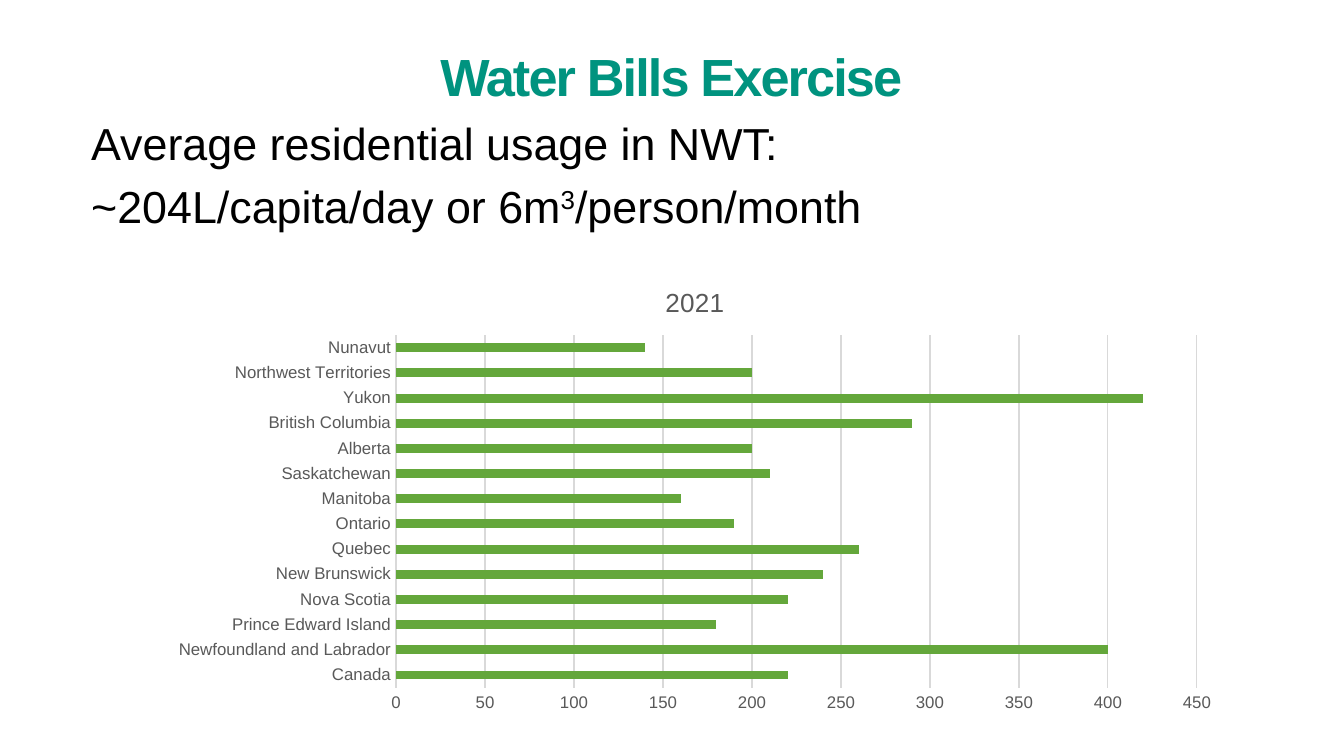
from typing import NamedTuple

from pptx import Presentation
from pptx.chart.data import CategoryChartData
from pptx.dml.color import RGBColor
from pptx.enum.chart import XL_CHART_TYPE, XL_TICK_MARK
from pptx.enum.text import MSO_ANCHOR, MSO_AUTO_SIZE, PP_ALIGN
from pptx.util import Inches, Pt

HUES = {"title": "00937F", "text": "000000", "label": "595959",
        "grid": "D9D9D9", "bar": "64A73B"}
FONT = "Arial"


class Usage(NamedTuple):
    place: str
    litres: int


USAGES = [
    Usage("Canada", 220),
    Usage("Newfoundland and Labrador", 400),
    Usage("Prince Edward Island", 180),
    Usage("Nova Scotia", 220),
    Usage("New Brunswick", 240),
    Usage("Quebec", 260),
    Usage("Ontario", 190),
    Usage("Manitoba", 160),
    Usage("Saskatchewan", 210),
    Usage("Alberta", 200),
    Usage("British Columbia", 290),
    Usage("Yukon", 420),
    Usage("Northwest Territories", 200),
    Usage("Nunavut", 140),
]


def style(font, size: float, hue: str, bold: bool = False) -> None:
    font.name, font.size, font.bold = FONT, Pt(size), bold
    font.color.rgb = RGBColor.from_string(HUES[hue])


def write(para, text: str, *, size: float, hue: str, bold: bool = False,
          track: float = 0, raised: int = 0) -> None:
    """Add a run; track is in points, raised in percent."""
    run = para.add_run()
    run.text = text
    style(run.font, size, hue, bold)
    props = run._r.get_or_add_rPr()
    if track:
        props.set("spc", str(int(track * 100)))
    if raised:
        props.set("baseline", str(raised * 1000))


def draw_title(slide) -> None:
    title = slide.shapes.title
    title.left, title.top = Inches(0.83), Inches(0.25)
    title.width, title.height = Inches(8.33), Inches(0.62)
    frame = title.text_frame
    frame.auto_size = MSO_AUTO_SIZE.NONE
    frame.vertical_anchor = MSO_ANCHOR.MIDDLE
    para = frame.paragraphs[0]
    para.alignment = PP_ALIGN.CENTER
    write(para, "Water Bills Exercise", size=28, hue="title", bold=True, track=-1)


def draw_body(slide) -> None:
    box = slide.shapes.add_textbox(Inches(0.58), Inches(0.81),
                                   Inches(8.25), Inches(1.17))
    frame = box.text_frame
    frame.word_wrap = True
    write(frame.paragraphs[0], "Average residential usage in NWT:", size=24, hue="text")
    para = frame.add_paragraph()
    para.space_before = Pt(5)
    for text, raised in (("~204L/capita/day or 6m", 0), ("3", 30),
                         ("/person/month", 0)):
        write(para, text, size=24, hue="text", raised=raised)


def draw_chart(slide) -> None:
    data = CategoryChartData()
    data.categories = [use.place for use in USAGES]
    data.add_series("2021", [use.litres for use in USAGES])
    chart = slide.shapes.add_chart(
        XL_CHART_TYPE.BAR_CLUSTERED, Inches(1.17), Inches(1.97),
        Inches(8), Inches(3.4), data).chart
    style(chart.font, 10, "text")
    chart.has_legend = False
    chart.has_title = True
    write(chart.chart_title.text_frame.paragraphs[0], "2021", size=14, hue="label")

    # Bars
    plot = chart.plots[0]
    plot.gap_width = 182
    plot.vary_by_categories = False
    fill = plot.series[0].format.fill
    fill.solid()
    fill.fore_color.rgb = RGBColor.from_string(HUES["bar"])

    # Axes and grid
    places, scale = chart.category_axis, chart.value_axis
    for axis in (places, scale):
        axis.major_tick_mark = axis.minor_tick_mark = XL_TICK_MARK.NONE
        style(axis.tick_labels.font, 9, "label")
    scale.minimum_scale, scale.maximum_scale, scale.major_unit = 0, 450, 50
    scale.format.line.fill.background()
    scale.has_major_gridlines = True
    for line in (places.format.line, scale.major_gridlines.format.line):
        line.color.rgb = RGBColor.from_string(HUES["grid"])
        line.width = Pt(0.75)


def main() -> None:
    deck = Presentation()
    # Widescreen, 16 to 9
    deck.slide_width = Inches(10)
    deck.slide_height = Inches(10 * 9 / 16)
    slide = deck.slides.add_slide(deck.slide_layouts[5])
    draw_title(slide)
    draw_body(slide)
    draw_chart(slide)
    deck.save("out.pptx")


if __name__ == "__main__":
    main()
